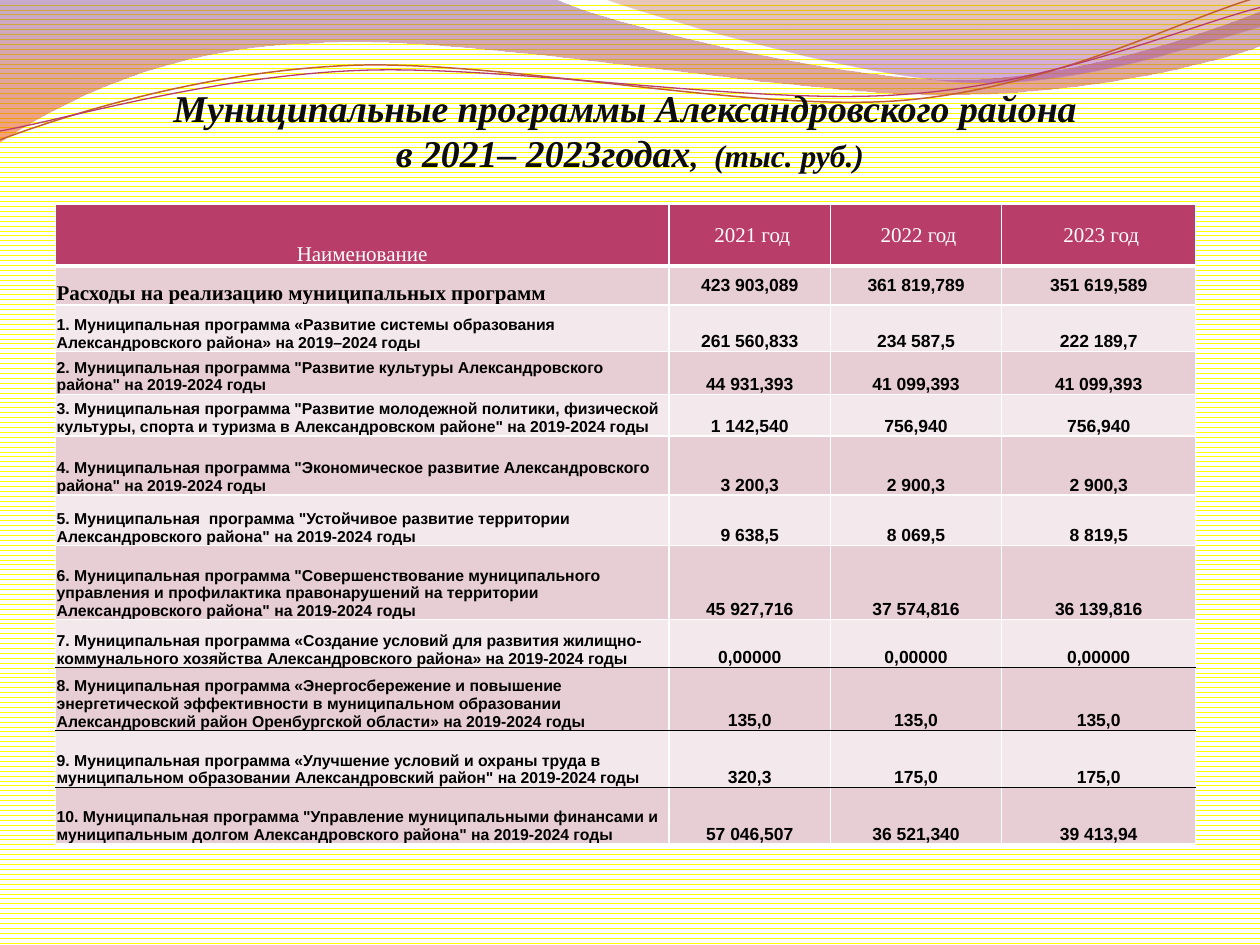
from lxml import etree
from pptx import Presentation
from pptx.dml.color import RGBColor
from pptx.enum.dml import MSO_PATTERN
from pptx.enum.text import MSO_ANCHOR, MSO_AUTO_SIZE, PP_ALIGN
from pptx.oxml.ns import qn
from pptx.util import Inches, Pt

WAVE = MSO_PATTERN.WAVE
MIDDLE, BOTTOM = MSO_ANCHOR.MIDDLE, MSO_ANCHOR.BOTTOM
LEFT, CENTER = PP_ALIGN.LEFT, PP_ALIGN.CENTER
NO_AUTOFIT = MSO_AUTO_SIZE.NONE
SERIF, SANS = "Times New Roman", "Arial"

COLORS = {
    "white": "FFFFFF", "black": "000000", "yellow": "FFFF00", "ink": "0D0D0D",
    "header": "B83D68", "dark_band": "E6CED4", "light_band": "F3E8EB",
    "violet": "834591", "orange": "F35307", "rust": "B74915", "lilac": "A14BB4",
    "copper": "C45F30",
}

RIBBONS = [
    ([("violet", 0, 45), ("orange", 1, 55)], (0, 0), [
        [(4.4, -0.01)],
        [(4.76, 0.17), (6.64, 0.63), (7.58, 0.63)],
        [(8.53, 0.63), (9.58, 0.26), (10, 0.09)],
        [(10.01, 0.36)],
        [(9.83, 0.44), (8.7, 0.76), (7.46, 0.75)],
        [(6.22, 0.75), (3.82, 0.28), (2.57, 0.34)],
        [(1.29, 0.36), (0.46, 0.83), (-0.01, 1.13)],
    ]),
    ([("rust", 0, 30), ("lilac", 0.8, 45)], (4.79, -0.01), [
        [(5.09, 0.11), (6.82, 0.62), (7.69, 0.65)],
        [(8.56, 0.69), (9.61, 0.32), (10, 0.21)],
        [(10, 0)],
    ]),
]
STRANDS = [
    ("copper", 0.85, (0, 1.11), [
        [(0.48, 0.93), (1.58, 0.57), (2.77, 0.52)],
        [(3.95, 0.47), (5.93, 0.89), (7.13, 0.8)],
        [(8.33, 0.71), (9.38, 0.15), (9.98, -0.02)],
    ]),
    ("header", 0.75, (0, 1.04), [
        [(0.47, 0.96), (1.64, 0.61), (2.83, 0.56)],
        [(4.03, 0.51), (5.97, 0.84), (7.17, 0.75)],
        [(8.36, 0.67), (9.41, 0.21), (10, 0.06)],
    ]),
]

COLUMN_WIDTHS = [4.87, 1.28, 1.36, 1.54]
ROWS = [
    (0.49, "Наименование", " 2021 год", " 2022 год", " 2023 год"),
    (0.31, "Расходы на реализацию муниципальных программ", "423 903,089", "361 819,789", "351 619,589"),
    (0.37, "1. Муниципальная программа «Развитие системы образования Александровского района» на 2019–2024 годы",
     "261 560,833", "234 587,5", "222 189,7"),
    (0.34, '2. Муниципальная программа "Развитие культуры Александровского района" на 2019-2024 годы',
     "44 931,393", "41 099,393", "41 099,393"),
    (0.33, '3. Муниципальная программа "Развитие молодежной политики, физической культуры, спорта и туризма '
     'в Александровском районе" на 2019-2024 годы', "1 142,540", "756,940", "756,940"),
    (0.47, '4. Муниципальная программа "Экономическое развитие Александровского района" на 2019-2024 годы',
     "3 200,3", "2 900,3", "2 900,3"),
    (0.4, '5. Муниципальная  программа "Устойчивое развитие территории Александровского района" на 2019-2024 годы',
     "9 638,5", "8 069,5", "8 819,5"),
    (0.59, '6. Муниципальная программа "Совершенствование муниципального управления и профилактика '
     'правонарушений на территории Александровского района" на 2019-2024 годы',
     "45 927,716", "37 574,816", "36 139,816"),
    (0.38, "7. Муниципальная программа «Создание условий для развития жилищно-коммунального хозяйства "
     "Александровского района» на 2019-2024 годы", "0,00000", "0,00000", "0,00000"),
    (0.5, "8. Муниципальная программа «Энергосбережение и повышение энергетической эффективности "
     "в муниципальном образовании Александровский район Оренбургской области» на 2019-2024 годы",
     "135,0", "135,0", "135,0"),
    (0.45, "9. Муниципальная программа «Улучшение условий и охраны труда в муниципальном образовании "
     'Александровский район" на 2019-2024 годы', "320,3", "175,0", "175,0"),
    (0.45, '10. Муниципальная программа "Управление муниципальными финансами и муниципальным долгом '
     'Александровского района" на 2019-2024 годы', "57 046,507", "36 521,340", "39 413,94"),
]
ROW_RULES = {0: ("white", 3), 8: ("black", 1), 9: ("black", 1), 10: ("black", 1)}
PLAIN_RULE = ("white", 1)


def rgb(name):
    return RGBColor.from_string(COLORS[name])


class SlideBuilder:
    def __init__(self, page):
        self.page = page

    def background(self):
        fill = self.page.background.fill
        fill.patterned()
        fill.pattern = WAVE
        fill.fore_color.rgb = rgb("yellow")
        fill.back_color.rgb = rgb("white")

    def outline(self, start, segments, close):
        builder = self.page.shapes.build_freeform(*map(Inches, start))
        builder.add_line_segments([tuple(map(Inches, segment[-1])) for segment in segments], close=close)
        shape = builder.convert_to_shape()
        shape.shadow.inherit = False
        for line, segment in zip(shape.element.xpath(".//a:lnTo"), segments):
            if len(segment) == 3:
                curve = etree.Element(qn("a:cubicBezTo"))
                for x, y in segment:
                    etree.SubElement(curve, qn("a:pt"), x=str(Inches(x) - shape.left), y=str(Inches(y) - shape.top))
                line.getparent().replace(line, curve)
        return shape

    def ribbon(self, stops, start, segments):
        shape = self.outline(start, segments, True)
        shape.line.fill.background()
        shape.fill.gradient()
        shape.fill.gradient_angle = 270
        for stop, (color, position, _) in zip(shape.fill.gradient_stops, stops):
            stop.color.rgb = rgb(color)
            stop.position = position
        tints = shape.element.xpath("./p:spPr/a:gradFill//a:srgbClr")
        for tint, (_, _, opacity) in zip(tints, stops):
            etree.SubElement(tint, qn("a:alpha"), val=str(opacity * 1000))

    def strand(self, color, width, start, segments):
        shape = self.outline(start, segments, False)
        shape.fill.background()
        shape.line.color.rgb = rgb(color)
        shape.line.width = Pt(width)

    def span(self, para, text, size, color, font=SERIF, bold=False, italic=False):
        span = para.add_run()
        span.text = text
        span.font.size = Pt(size)
        span.font.name = font
        span.font.bold = bold
        span.font.italic = italic
        span.font.color.rgb = rgb(color)

    def title(self, left, top, width, height):
        box = self.page.shapes.title
        box.element.getparent().append(box.element)
        box.left, box.top, box.width, box.height = map(Inches, (left, top, width, height))
        frame = box.text_frame
        frame.auto_size = NO_AUTOFIT
        frame.word_wrap = True
        frame.vertical_anchor = BOTTOM
        frame.margin_left = frame.margin_right = frame.margin_bottom = 0
        frame.margin_top = Inches(0.05)
        para = frame.paragraphs[0]
        para.alignment = CENTER
        self.span(para, "Муниципальные программы Александровского района ", 21.6, "ink", bold=True, italic=True)
        para.add_line_break()
        self.span(para, "в 2021– 2023годах", 21.6, "ink", bold=True, italic=True)
        self.span(para, ",  (тыс. руб.)", 18, "ink", bold=True, italic=True)

    def borders(self, cell, above, below):
        properties = cell._tc.get_or_add_tcPr()
        rules = (("L", PLAIN_RULE), ("R", PLAIN_RULE), ("T", above), ("B", below))
        for index, (side, (color, width)) in enumerate(rules):
            line = etree.Element(qn(f"a:ln{side}"), w=str(Pt(width)))
            fill = etree.SubElement(line, qn("a:solidFill"))
            etree.SubElement(fill, qn("a:srgbClr"), val=COLORS[color])
            properties.insert(index, line)

    def cell(self, cell, text, row, column):
        cell.margin_left = cell.margin_top = cell.margin_right = Inches(0.01)
        cell.margin_bottom = 0
        cell.vertical_anchor = MIDDLE if row < 2 and column else BOTTOM
        cell.fill.solid()
        band = "dark_band" if row % 2 else "light_band"
        cell.fill.fore_color.rgb = rgb(band if row else "header")
        self.borders(cell, ROW_RULES.get(row - 1, PLAIN_RULE), ROW_RULES.get(row, PLAIN_RULE))
        para = cell.text_frame.paragraphs[0]
        para.alignment = CENTER if column or not row else LEFT
        if row == 0:
            self.span(para, text, 12, "white")
        elif row == 1 and column == 0:
            self.span(para, text, 12, "black", bold=True)
        else:
            self.span(para, text, 10 if column else 9, "black", SANS, bold=True)

    def table(self, left, top):
        width, height = sum(COLUMN_WIDTHS), sum(row[0] for row in ROWS)
        table = self.page.shapes.add_table(
            len(ROWS), len(COLUMN_WIDTHS), *map(Inches, (left, top, width, height))).table
        for column, size in zip(table.columns, COLUMN_WIDTHS):
            column.width = Inches(size)
        for row, (size, *texts) in enumerate(ROWS):
            table.rows[row].height = Inches(size)
            for column, text in enumerate(texts):
                self.cell(table.cell(row, column), text, row, column)


def main():
    deck = Presentation()
    deck.slide_width, deck.slide_height = Inches(10), Inches(7.5)
    builder = SlideBuilder(deck.slides.add_slide(deck.slide_layouts[5]))
    builder.background()
    for ribbon in RIBBONS:
        builder.ribbon(*ribbon)
    for strand in STRANDS:
        builder.strand(*strand)
    builder.title(0.51, 0.6, 8.98, 0.79)
    builder.table(0.44, 1.62)
    deck.save("out.pptx")


if __name__ == "__main__":
    main()
